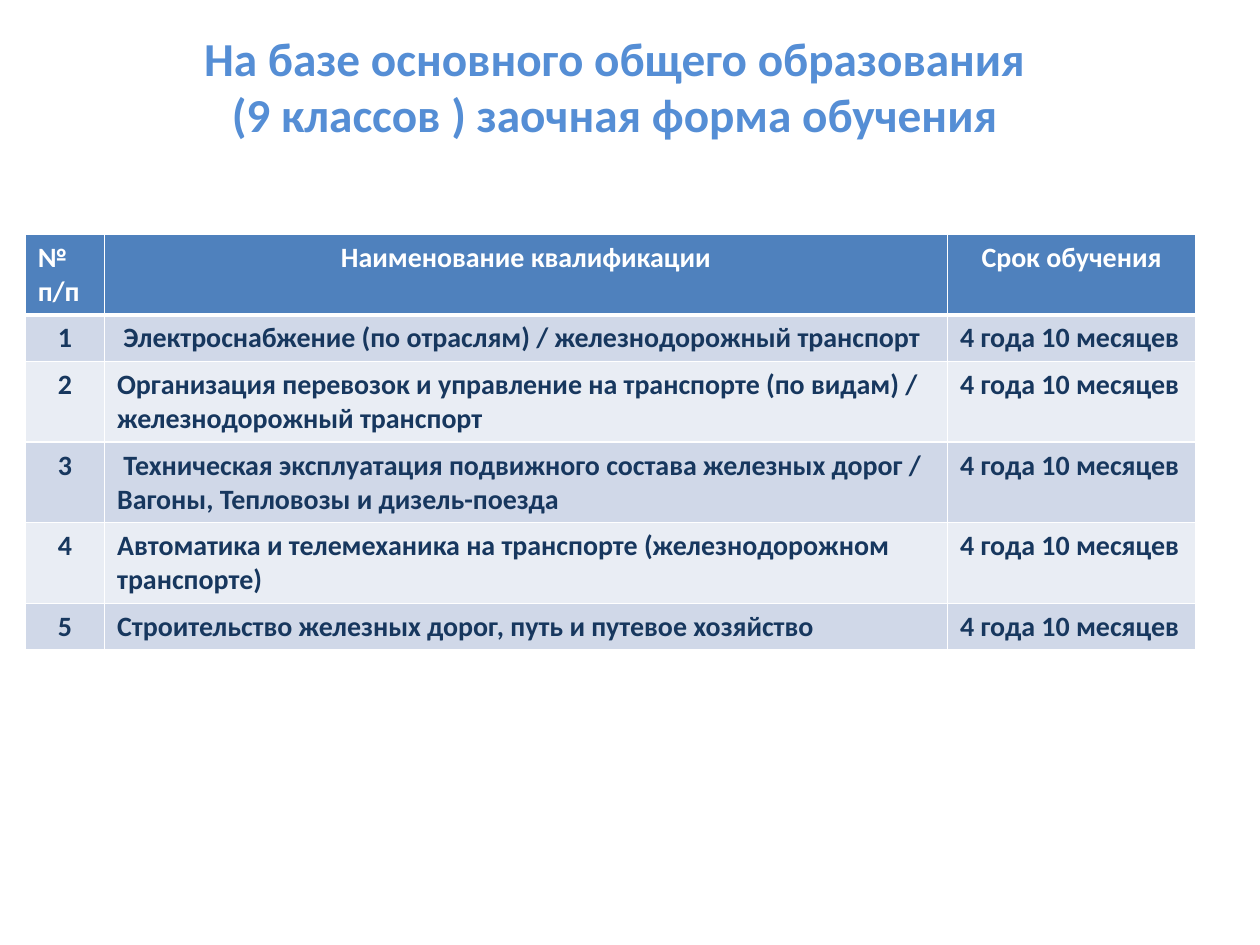
from dataclasses import dataclass

from lxml import etree
from pptx import Presentation
from pptx.dml.color import RGBColor
from pptx.enum import text
from pptx.oxml import ns
from pptx.util import Inches, Pt

LEFT, CENTER = text.PP_ALIGN.LEFT, text.PP_ALIGN.CENTER


@dataclass(frozen=True)
class Theme:
    face: str = "Calibri"
    title: str = "558ED5"
    head: str = "4F81BD"
    bands: tuple = ("D0D8E8", "E9EDF4")
    ink: str = "17375E"
    white: str = "FFFFFF"
    big: int = 27
    body: int = 16
    thin: int = 1
    thick: int = 3


class Page:
    def __init__(self, slide, theme):
        self.slide, self.theme = slide, theme

    def label(self, frame, words, size, color, align):
        para = frame.paragraphs[0]
        para.text = words
        para.alignment = align
        look = {"name": self.theme.face, "size": Pt(size), "bold": True}
        for run in para.runs:
            for key, value in look.items():
                setattr(run.font, key, value)
            run.font.color.rgb = RGBColor.from_string(color)

    def title(self, words, box):
        frame = self.slide.shapes.add_textbox(*map(Inches, box)).text_frame
        frame.word_wrap = True
        frame.vertical_anchor = text.MSO_ANCHOR.MIDDLE
        self.label(frame, words, self.theme.big, self.theme.title, CENTER)

    def edge(self, cell, side, width):
        """Draw one white cell border; the fill must be set afterwards."""
        line = etree.SubElement(cell._tc.get_or_add_tcPr(), ns.qn(f"a:{side}"),
                                w=str(Pt(width)))
        fill = etree.SubElement(line, ns.qn("a:solidFill"))
        etree.SubElement(fill, ns.qn("a:srgbClr"), val=self.theme.white)

    def cell(self, cell, words, fill, color, align, top, base):
        t = self.theme
        for side, width in {"lnL": t.thin, "lnR": t.thin,
                            "lnT": top, "lnB": base}.items():
            self.edge(cell, side, width)
        cell.fill.solid()
        cell.fill.fore_color.rgb = RGBColor.from_string(fill)
        self.label(cell.text_frame, words, t.body, color, align)

    def table(self, rows, left, top, widths, heights):
        t = self.theme
        grid = self.slide.shapes.add_table(
            len(rows), len(widths), Inches(left), Inches(top),
            Inches(sum(widths)), Inches(sum(heights))).table
        for col, width in zip(grid.columns, widths):
            col.width = Inches(width)
        for r, (row, height) in enumerate(zip(rows, heights)):
            grid.rows[r].height = Inches(height)
            head = r == 0
            fill = t.head if head else t.bands[(r - 1) % 2]
            color = t.white if head else t.ink
            above = t.thick if r == 1 else t.thin
            below = t.thick if head else t.thin
            for c, words in enumerate(row):
                mid = (c > 0) if head else (c == 0)
                self.cell(grid.cell(r, c), words, fill, color,
                          CENTER if mid else LEFT, above, below)


def main():
    deck = Presentation()
    deck.slide_width, deck.slide_height = Inches(10), Inches(7.5)
    page = Page(deck.slides.add_slide(deck.slide_layouts[6]), Theme())

    page.title("На базе основного общего образования \v"
               "(9 классов ) заочная форма обучения ", (0.67, 0.13, 8.5, 1.1))

    term = "4 года 10 месяцев"
    skills = [
        " Электроснабжение (по отраслям) / железнодорожный транспорт",
        "Организация перевозок и управление на транспорте (по видам) / "
        "железнодорожный транспорт",
        " Техническая эксплуатация подвижного состава железных дорог / "
        "Вагоны, Тепловозы и дизель-поезда",
        "Автоматика и телемеханика на транспорте (железнодорожном транспорте)",
        "Строительство железных дорог, путь и путевое хозяйство",
    ]
    rows = [("№ п/п", "Наименование квалификации", "Срок обучения")]
    rows += [(str(n), skill, term) for n, skill in enumerate(skills, 1)]
    one, two = 0.37, 0.64
    page.table(rows, 0.2, 1.86, (0.63, 6.69, 1.97),
               (two, one, two, two, two, one))
    deck.save("out.pptx")


if __name__ == "__main__":
    main()
